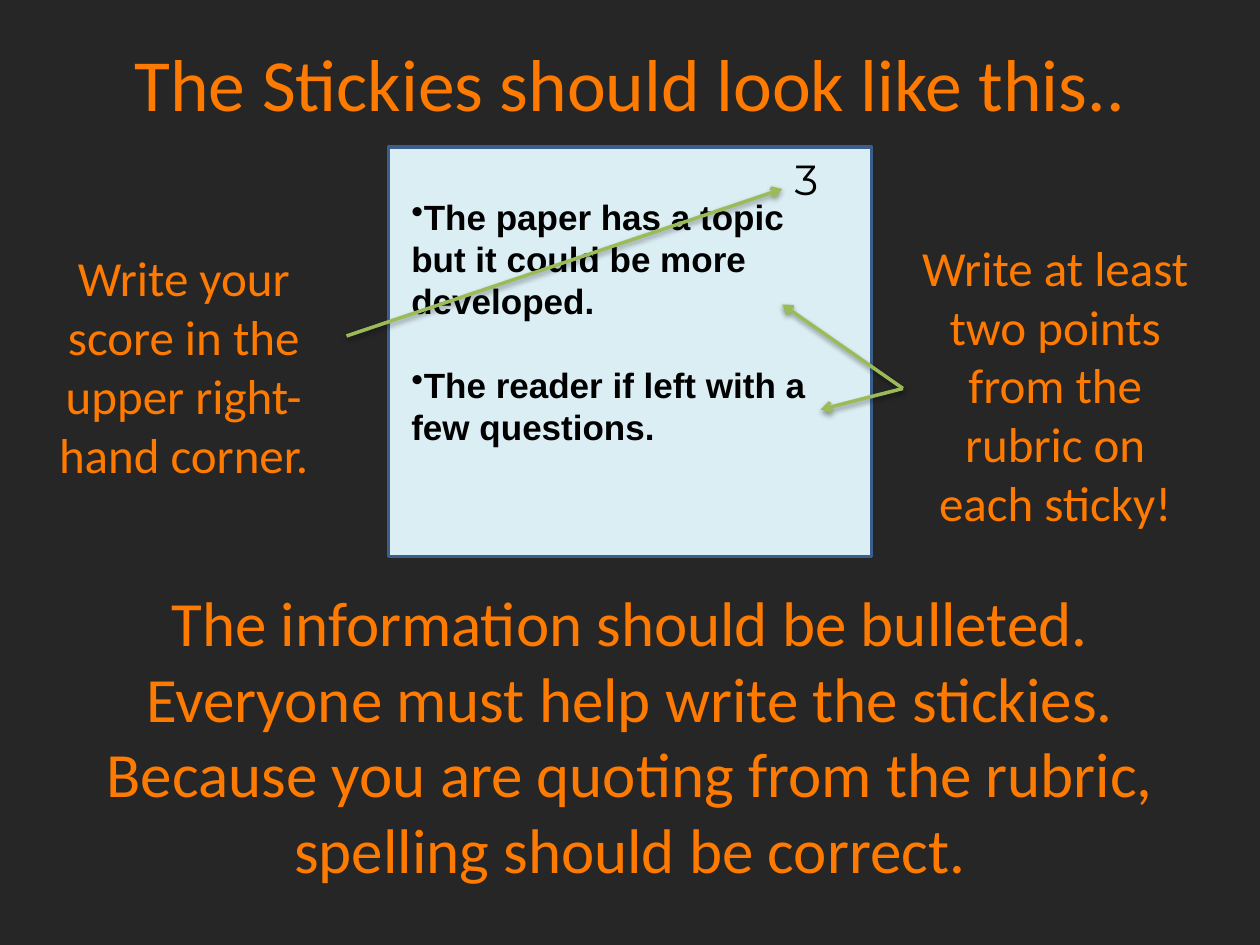
from dataclasses import dataclass

from lxml import etree
from pptx import Presentation
from pptx.dml.color import RGBColor
from pptx.enum.shapes import MSO_CONNECTOR, MSO_SHAPE
from pptx.enum.text import PP_ALIGN
from pptx.oxml.ns import qn
from pptx.util import Pt

CENTER = PP_ALIGN.CENTER
LEFT = PP_ALIGN.LEFT
RECT = MSO_SHAPE.RECTANGLE
STRAIGHT = MSO_CONNECTOR.STRAIGHT
RIGHT_SIDE = 3


@dataclass(frozen=True)
class Theme:
    background: RGBColor = RGBColor(0x26, 0x26, 0x26)
    accent: RGBColor = RGBColor(0xFF, 0x7A, 0x00)
    ink: RGBColor = RGBColor(0x00, 0x00, 0x00)
    note: RGBColor = RGBColor(0xDB, 0xEE, 0xF4)
    note_edge: RGBColor = RGBColor(0x3A, 0x5F, 0x8C)
    arrow: RGBColor = RGBColor(0x9B, 0xBB, 0x59)
    font: str = "Calibri"
    note_font: str = "Arial"
    score_font: str = "Montserrat"
    title: int = 42
    rules: int = 36
    caption: int = 28
    score: int = 24
    note_text: int = 20
    note_leading: int = 24
    line: int = 2


THEME = Theme()


def add_text(slide, box, lines, size, font=THEME.font, color=THEME.accent,
             align=CENTER, bold=False):
    sp = slide.shapes.add_textbox(*map(Pt, box))
    tf = sp.text_frame
    tf.word_wrap = True
    tf.text = "\n".join(lines)
    for p in tf.paragraphs:
        p.alignment = align
        for r in p.runs:
            r.font.size = Pt(size)
            r.font.name = font
            r.font.bold = bold
            r.font.color.rgb = color
    return sp


def add_note(slide, box):
    sp = slide.shapes.add_shape(RECT, *map(Pt, box))
    sp.shadow.inherit = False
    sp.fill.solid()
    sp.fill.fore_color.rgb = THEME.note
    sp.line.color.rgb = THEME.note_edge
    sp.line.width = Pt(THEME.line)


def add_bullets(slide, box, lines):
    sp = add_text(slide, box, lines, THEME.note_text, THEME.note_font,
                  THEME.ink, LEFT, True)
    for i, p in enumerate(sp.text_frame.paragraphs):
        p.line_spacing = Pt(THEME.note_leading)
        p.space_before = Pt(THEME.note_leading if i else 0)
        pPr = p._p.get_or_add_pPr()
        pPr.set("marL", "0")
        pPr.set("indent", "0")
        etree.SubElement(pPr, qn("a:buChar"), char="•")


def add_shadow(spPr):
    effects = etree.SubElement(spPr, qn("a:effectLst"))
    shadow = etree.SubElement(effects, qn("a:outerShdw"), blurRad=str(Pt(3.1)),
                              dist=str(Pt(1.6)), dir="5400000", rotWithShape="0")
    color = etree.SubElement(shadow, qn("a:srgbClr"), val=str(THEME.ink))
    etree.SubElement(color, qn("a:alpha"), val="38000")


def add_arrow(slide, start, end):
    s = slide.shapes.add_connector(STRAIGHT, *map(Pt, start + end))
    s.line.color.rgb = THEME.arrow
    s.line.width = Pt(THEME.line)
    etree.SubElement(s.line._get_or_add_ln(), qn("a:tailEnd"), type="arrow")
    add_shadow(s._element.spPr)
    return s


def main():
    prs = Presentation()
    prs.slide_width, prs.slide_height = Pt(720), Pt(540)
    slide = prs.slides.add_slide(prs.slide_layouts[6])
    slide.background.fill.solid()
    slide.background.fill.fore_color.rgb = THEME.background

    add_text(slide, (0, 18, 720, 58), ["The Stickies should look like this.."],
             THEME.title)
    add_note(slide, (222, 84, 276, 234))
    add_text(slide, (447, 84, 45, 36), ["3"], THEME.score, THEME.score_font,
             THEME.ink, LEFT)
    add_bullets(slide, (228, 108, 258, 170), [
        "The paper has a topic but it could be more developed.",
        "The reader if left with a few questions.",
    ])
    add_text(slide, (0, 330, 720, 181), [
        "The information should be bulleted.",
        "Everyone must help write the stickies.",
        "Because you are quoting from the rubric, spelling should be correct.",
    ], THEME.rules)
    add_text(slide, (516, 132, 174, 143),
             ["Write at least two points from the rubric on each sticky!"],
             THEME.caption)
    score_caption = add_text(slide, (12, 138, 186, 108),
                             ["Write your score in the upper right-hand corner."],
                             THEME.caption)

    score_arrow = add_arrow(slide, (198, 192), (447, 108))
    score_arrow.begin_connect(score_caption, RIGHT_SIDE)
    for end in ((447, 174), (469, 234)):
        add_arrow(slide, (516, 222), end)

    prs.save("out.pptx")


if __name__ == "__main__":
    main()
